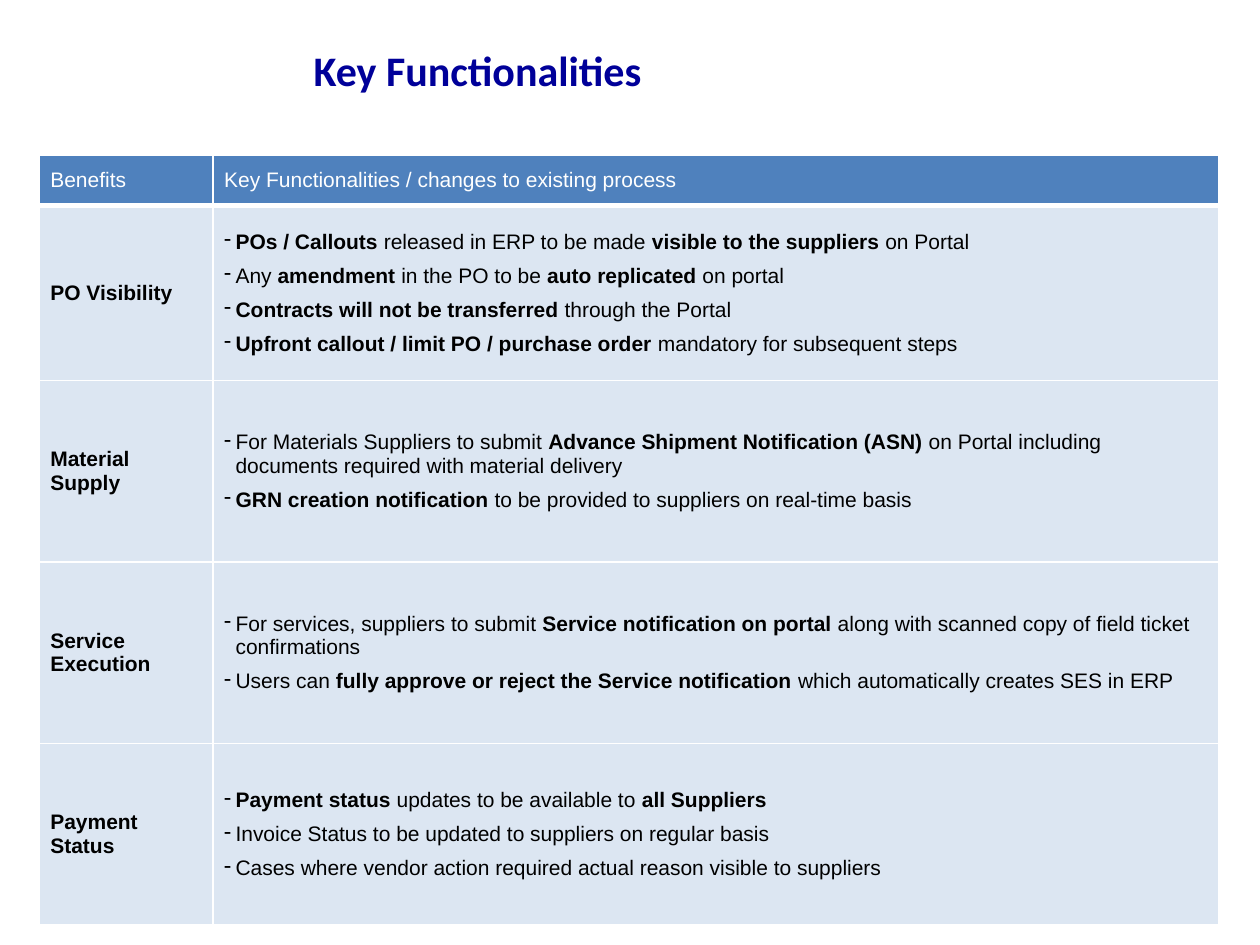
from lxml import etree
from pptx import Presentation
from pptx import util as u
from pptx.dml.color import RGBColor
from pptx.enum import text as t
from pptx.oxml.ns import qn

TITLE = "Key Functionalities"
HEADINGS = ("Benefits", "Key Functionalities / changes to existing process")
BENEFITS = [
    ("PO Visibility", [
        "*POs / Callouts *released in ERP to be made *visible to the suppliers *on Portal",
        "Any *amendment* in the PO to be *auto replicated *on portal",
        "*Contracts will not be transferred *through the Portal",
        "*Upfront callout / limit PO / purchase order *mandatory for subsequent steps",
    ]),
    ("Material Supply", [
        "For Materials Suppliers to submit *Advance Shipment Notification (ASN)* on Portal "
        "including documents required with material delivery",
        "*GRN creation notification *to be provided to suppliers on real-time basis",
    ]),
    ("Service Execution", [
        "For services, suppliers to submit *Service notification on portal *along with "
        "scanned copy of field ticket confirmations",
        "Users can *fully approve or reject the Service notification *which automatically "
        "creates SES in ERP",
    ]),
    ("Payment Status", [
        "*Payment status *updates to be available to *all Suppliers*",
        "Invoice Status to be updated to suppliers on regular basis",
        "Cases where vendor action required actual reason visible to suppliers",
    ]),
]

THEME = {
    "title_font": "Calibri", "title_size": 24, "title": "000099",
    "font": "Arial", "size": 12, "ink": "000000", "paper": "FFFFFF",
    "header": "4F81BD", "body": "DCE6F2", "rule": 1, "header_rule": 3,
}
COLUMNS = (1.38, 7.98)
ROWS = (0.4, 1.39, 1.44, 1.44, 1.44)
HANGING = 0.09


def write(paragraph, content, font=THEME["font"], size=THEME["size"],
          color=THEME["ink"], bullet=None, after=None):
    paragraph.alignment = t.PP_ALIGN.LEFT
    if bullet:
        props = paragraph._p.get_or_add_pPr()
        props.set("marL", str(u.Inches(HANGING)))
        props.set("indent", str(-u.Inches(HANGING)))
        etree.SubElement(props, qn("a:buChar")).set("char", bullet)
    if after is not None:
        paragraph.space_after = u.Pt(after)
    for position, part in enumerate(content.split("*")):
        if part:
            run = paragraph.add_run()
            run.text = part
            run.font.name = font
            run.font.size = u.Pt(size)
            run.font.bold = position % 2 == 1
            run.font.color.rgb = RGBColor.from_string(color)


def dress(cell, fill, bottom):
    cell.vertical_anchor = t.MSO_ANCHOR.MIDDLE
    cell.margin_left = cell.margin_right = u.Inches(0.09)
    cell.margin_top = cell.margin_bottom = u.Inches(0.05)
    cell.fill.solid()
    cell.fill.fore_color.rgb = RGBColor.from_string(fill)
    props = cell._tc.get_or_add_tcPr()
    for position, side in enumerate("LRTB"):
        border = etree.Element(qn("a:ln" + side))
        border.set("w", str(u.Pt(bottom if side == "B" else THEME["rule"])))
        paint = etree.SubElement(border, qn("a:solidFill"))
        etree.SubElement(paint, qn("a:srgbClr")).set("val", THEME["paper"])
        props.insert(position, border)


def add_title(slide):
    title = slide.shapes.title
    title.left, title.top = u.Inches(0.31), u.Inches(0.2)
    title.width, title.height = u.Inches(8.41), u.Inches(0.71)
    frame = title.text_frame
    frame.word_wrap = True
    frame.auto_size = t.MSO_AUTO_SIZE.NONE
    frame.vertical_anchor = t.MSO_ANCHOR.MIDDLE
    frame.margin_left = u.Inches(2.18)
    frame.margin_top = frame.margin_right = frame.margin_bottom = 0
    write(frame.paragraphs[0], f"*{TITLE}*", font=THEME["title_font"],
          size=THEME["title_size"], color=THEME["title"])


def add_benefits(slide):
    grid = slide.shapes.add_table(
        len(ROWS), len(COLUMNS), u.Inches(0.31), u.Inches(1.23),
        u.Inches(sum(COLUMNS)), u.Inches(sum(ROWS))).table
    for column, width in zip(grid.columns, COLUMNS):
        column.width = u.Inches(width)
    for row, height in zip(grid.rows, ROWS):
        row.height = u.Inches(height)

    for cell, heading in zip(grid.rows[0].cells, HEADINGS):
        dress(cell, THEME["header"], THEME["header_rule"])
        write(cell.text_frame.paragraphs[0], heading, color=THEME["paper"])

    for index, (benefit, changes) in enumerate(BENEFITS, start=1):
        name, detail = grid.rows[index].cells
        for cell in (name, detail):
            dress(cell, THEME["body"], THEME["rule"])
        write(name.text_frame.paragraphs[0], f"*{benefit}*")
        frame = detail.text_frame
        for number, change in enumerate(changes):
            paragraph = frame.add_paragraph() if number else frame.paragraphs[0]
            write(paragraph, change, bullet="-", after=6)


def main():
    deck = Presentation()
    deck.slide_width, deck.slide_height = u.Inches(10), u.Inches(7.5)
    slide = deck.slides.add_slide(deck.slide_layouts[5])
    add_benefits(slide)
    add_title(slide)
    deck.save("out.pptx")


if __name__ == "__main__":
    main()
